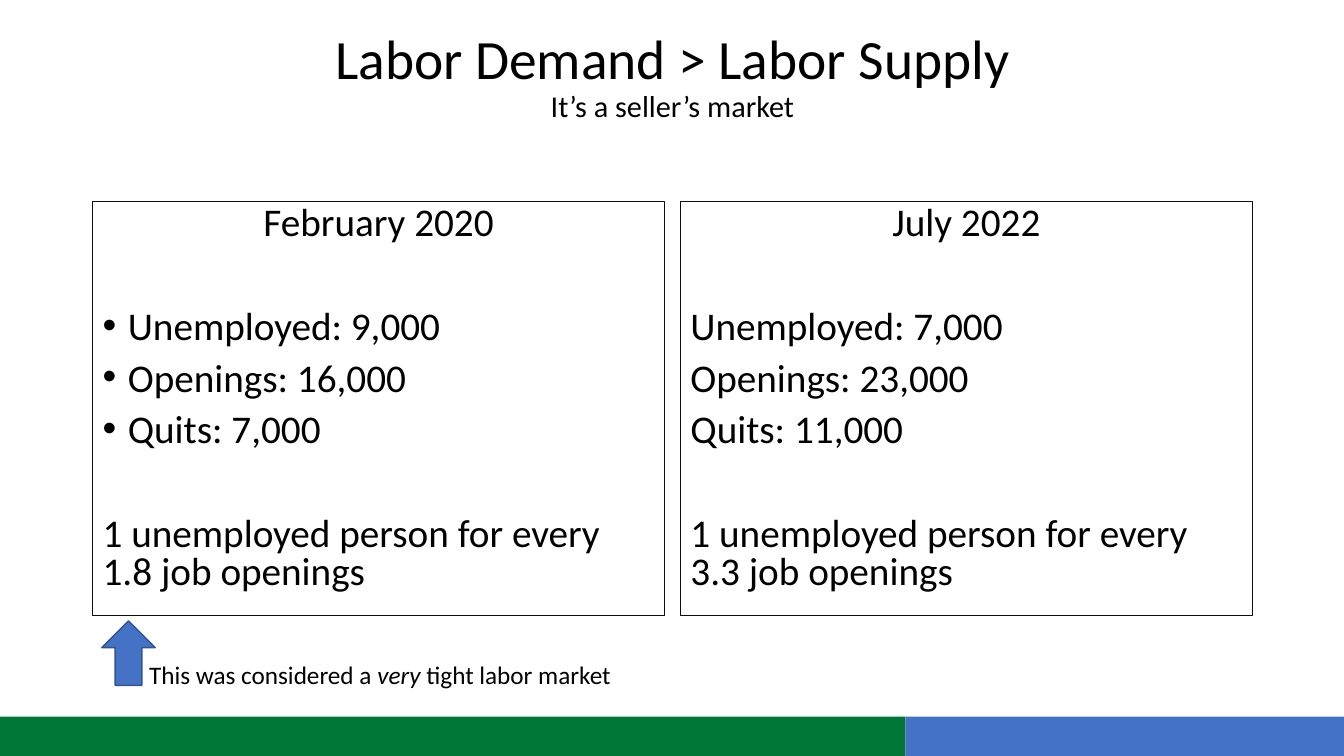
from dataclasses import dataclass

import pptx
import pptx.dml.color
import pptx.enum.shapes
import pptx.enum.text
import pptx.oxml
import pptx.oxml.ns
import pptx.util
from pptx.util import Inches

SHAPE = pptx.enum.shapes.MSO_SHAPE
ALIGN = pptx.enum.text.PP_ALIGN
ANCHOR = pptx.enum.text.MSO_ANCHOR


@dataclass(frozen=True)
class Theme:
    font: str = "Calibri"
    text: str = "000000"
    green: str = "007736"
    blue: str = "4472C4"
    arrow_line: str = "325491"
    panel_line: str = "0D0D0D"
    title: float = 39.6
    subtitle: float = 21.6
    body: float = 28
    caption: float = 18
    body_gap: float = 10
    section_gap: float = 47.3


THEME = Theme()


def rgb(value):
    return pptx.dml.color.RGBColor.from_string(value)


def add_shape(s, kind, box, fill=None, line=None, width=1):
    sp = s.shapes.add_shape(kind, *map(Inches, box))
    sp.shadow.inherit = False
    if fill:
        sp.fill.solid()
        sp.fill.fore_color.rgb = rgb(fill)
    else:
        sp.fill.background()
    if line:
        sp.line.color.rgb = rgb(line)
        sp.line.width = pptx.util.Pt(width)
    else:
        sp.line.fill.background()
    return sp


def add_textbox(s, box, anchor):
    tf = s.shapes.add_textbox(*map(Inches, box)).text_frame
    tf.word_wrap = True
    tf.vertical_anchor = anchor
    return tf


def add_run(p, text, size, italic=False):
    r = p.add_run()
    r.text = text
    r.font.name = THEME.font
    r.font.size = pptx.util.Pt(size)
    r.font.color.rgb = rgb(THEME.text)
    r.font.italic = italic


def add_bullet(p):
    pPr = p._p.get_or_add_pPr()
    pPr.set("marL", str(Inches(0.25)))
    pPr.set("indent", str(Inches(-0.25)))
    ns = pptx.oxml.ns.nsdecls("a")
    pPr.append(pptx.oxml.parse_xml(f'<a:buFont {ns} typeface="Arial"/>'))
    pPr.append(pptx.oxml.parse_xml(f'<a:buChar {ns} char="•"/>'))


def add_heading(s, box, title, subtitle):
    tf = add_textbox(s, box, ANCHOR.MIDDLE)
    lines = [(title, THEME.title), (subtitle, THEME.subtitle)]
    for i, (text, size) in enumerate(lines):
        p = tf.add_paragraph() if i else tf.paragraphs[0]
        p.alignment = ALIGN.CENTER
        p.line_spacing = 0.9
        add_run(p, text, size)


def add_panel(s, box, month, figures, ratio, bulleted):
    sp = add_shape(s, SHAPE.RECTANGLE, box, line=THEME.panel_line, width=0.75)
    tf = sp.text_frame
    tf.word_wrap = True
    tf.vertical_anchor = ANCHOR.TOP
    last = len(figures) + 1
    for i, text in enumerate([month, *figures, ratio]):
        p = tf.add_paragraph() if i else tf.paragraphs[0]
        p.alignment = ALIGN.LEFT if i else ALIGN.CENTER
        p.line_spacing = 0.8
        if i:
            gap = THEME.section_gap if i in (1, last) else THEME.body_gap
            p.space_before = pptx.util.Pt(gap)
        if bulleted and 0 < i < last:
            add_bullet(p)
        add_run(p, text, THEME.body)


def add_callout(s, box, runs):
    x, y, w, h = box
    add_shape(s, SHAPE.UP_ARROW, (x, y, 0.53, 0.64), THEME.blue, THEME.arrow_line)
    tf = add_textbox(s, (x + 0.37, y + 0.33, w - 0.37, h - 0.33), ANCHOR.TOP)
    for text, italic in runs:
        add_run(tf.paragraphs[0], text, THEME.caption, italic)


def add_footer(s, box, split):
    x, y, w, h = box
    add_shape(s, SHAPE.RECTANGLE, (x, y, split, h), THEME.green)
    add_shape(s, SHAPE.RECTANGLE, (x + split, y, w - split, h), THEME.blue)


def add_market_slide(prs):
    s = prs.slides.add_slide(prs.slide_layouts[6])
    add_footer(s, (0, 7.11, 13.33, 0.39), 8.98)
    add_heading(s, (0.92, 0.4, 11.5, 0.75),
                "Labor Demand > Labor Supply", "It’s a seller’s market")
    panels = [
        ("February 2020",
         ["Unemployed: 9,000", "Openings: 16,000", "Quits: 7,000"],
         "1 unemployed person for every 1.8 job openings", True),
        ("July 2022",
         ["Unemployed: 7,000", "Openings: 23,000", "Quits: 11,000"],
         "1 unemployed person for every 3.3 job openings", False),
    ]
    width, gap = 5.67, 0.16
    for i, panel in enumerate(panels):
        add_panel(s, (0.92 + i * (width + gap), 2, width, 4.11), *panel)
    add_callout(s, (1.01, 6.16, 5.46, 0.73),
                [("This was considered a ", False), ("very", True),
                 (" tight labor market", False)])


def main():
    prs = pptx.Presentation()
    prs.slide_width = Inches(13.33)
    prs.slide_height = Inches(7.5)
    add_market_slide(prs)
    prs.save("out.pptx")


if __name__ == "__main__":
    main()
